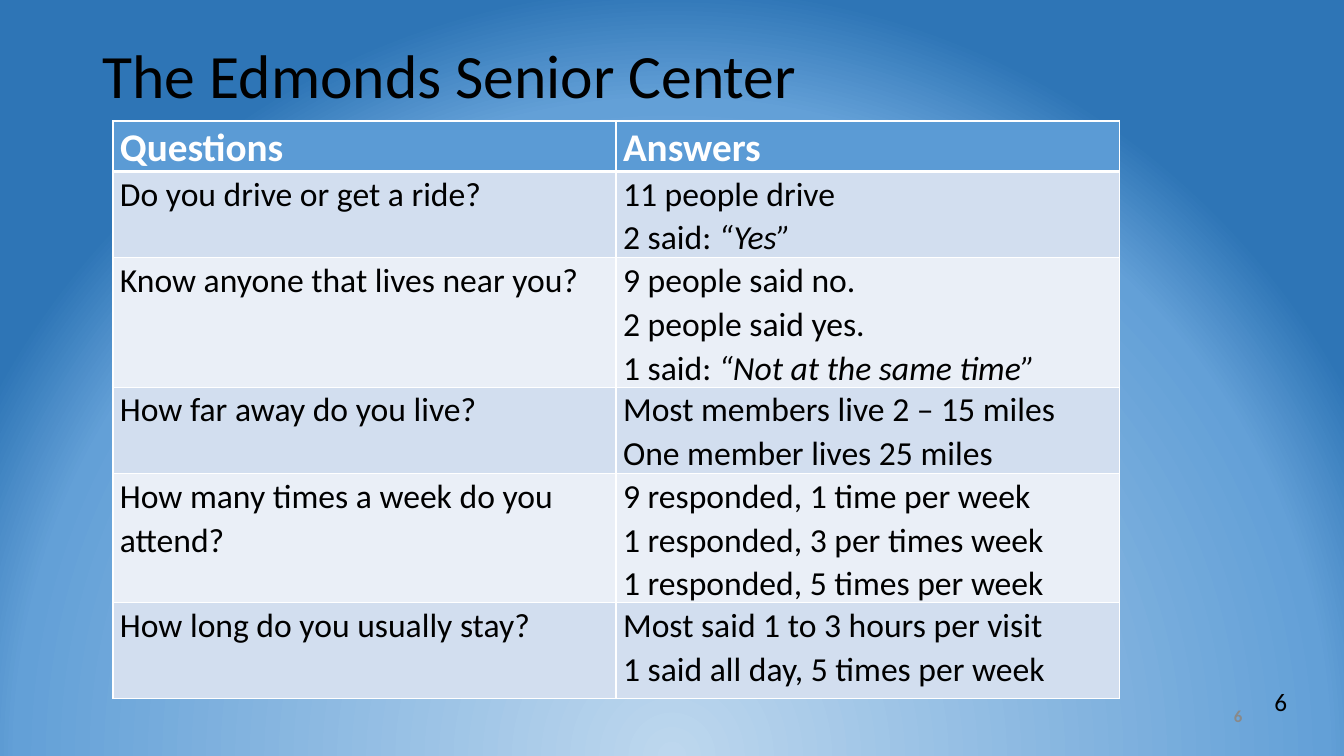
from dataclasses import dataclass

from lxml import etree
from pptx import Presentation
from pptx.dml.color import RGBColor
from pptx.enum.text import PP_ALIGN
from pptx.oxml.ns import qn
from pptx.util import Inches, Pt

LEFT, RIGHT = PP_ALIGN.LEFT, PP_ALIGN.RIGHT


@dataclass(frozen=True)
class Theme:
    font: str = "Calibri"
    ink: str = "000000"
    white: str = "FFFFFF"
    gray: str = "898989"
    head: str = "5B9BD5"
    bands: tuple = ("D2DEEF", "EAEFF7")
    glow: tuple = ((0, "BDD7EE"), (85, "63A0D7"), (100, "2E75B6"))
    title_size: int = 44
    head_size: int = 28
    body_size: int = 24
    page_size: int = 18
    small_size: int = 12


THEME = Theme()
ROWS = (
    ("Do you drive or get a ride?", ("11 people drive", "2 said: “Yes”")),
    ("Know anyone that lives near you?",
     ("9 people said no.", "2 people said yes.", "1 said: “Not at the same time”")),
    ("How far away do you live?",
     ("Most members live 2 – 15 miles", "One member lives 25 miles")),
    ("How many times a week do you attend?",
     ("9 responded, 1 time per week", "1 responded, 3 per times week",
      "1 responded, 5 times per week")),
    ("How long do you usually stay?",
     ("Most said 1 to 3 hours per visit", "1 said all day, 5 times per week")),
)
HEIGHTS = (0.48, 0.84, 1.26, 0.84, 1.26, 0.95)


def add_run(para, text, size, color, bold=False, italic=False):
    run = para.add_run()
    run.text = text
    font = run.font
    font.name, font.size = THEME.font, Pt(size)
    font.bold, font.italic = bold, italic
    font.color.rgb = RGBColor.from_string(color)


def add_text(slide, box, text, size, color, align=LEFT, gap=1.0, bold=False):
    frame = slide.shapes.add_textbox(*map(Inches, box)).text_frame
    frame.word_wrap = True
    para = frame.paragraphs[0]
    para.alignment, para.line_spacing = align, gap
    add_run(para, text, size, color, bold)


def add_stop(parent, spot, color):
    stop = etree.SubElement(parent, qn("a:gs"), pos=str(spot * 1000))
    etree.SubElement(stop, qn("a:srgbClr"), val=color)


def paint_back(slide):
    slide.background.fill.gradient()
    grad = next(slide.element.iter(qn("a:gradFill")))
    for child in list(grad):
        grad.remove(child)
    stops = etree.SubElement(grad, qn("a:gsLst"))
    for spot, color in THEME.glow:
        add_stop(stops, spot, color)
    ring = etree.SubElement(grad, qn("a:path"), path="circle")
    etree.SubElement(ring, qn("a:fillToRect"),
                     l="50000", t="130000", r="50000", b="-30000")


def add_edges(cell, top, bottom):
    props = cell._tc.get_or_add_tcPr()
    for side, width in (("L", 1), ("R", 1), ("T", top), ("B", bottom)):
        line = etree.SubElement(props, qn(f"a:ln{side}"), w=str(Pt(width)))
        fill = etree.SubElement(line, qn("a:solidFill"))
        etree.SubElement(fill, qn("a:srgbClr"), val=THEME.white)


def fill_cell(cell, lines, row):
    head = row == 0
    size = THEME.head_size if head else THEME.body_size
    ink = THEME.white if head else THEME.ink
    back = THEME.head if head else THEME.bands[(row - 1) % 2]
    add_edges(cell, 3 if row == 1 else 1, 3 if head else 1)
    cell.fill.solid()
    cell.fill.fore_color.rgb = RGBColor.from_string(back)
    cell.margin_left = cell.margin_right = Inches(0.07)
    cell.margin_top = cell.margin_bottom = Inches(0)
    frame = cell.text_frame
    for index, text in enumerate(lines):
        para = frame.add_paragraph() if index else frame.paragraphs[0]
        para.line_spacing = 1.07
        plain, mark, quote = text.partition("“")
        add_run(para, plain, size, ink, head)
        if mark:
            add_run(para, mark + quote, size, ink, italic=True)


def add_grid(slide):
    box = map(Inches, (1.12, 1.2, 9.99, sum(HEIGHTS)))
    grid = slide.shapes.add_table(len(HEIGHTS), 2, *box).table
    grid.horz_banding = False
    for col in grid.columns:
        col.width = Inches(4.99)
    data = (("Questions", ("Answers",)),) + ROWS
    for row, (height, (ask, reply)) in enumerate(zip(HEIGHTS, data)):
        grid.rows[row].height = Inches(height)
        fill_cell(grid.cell(row, 0), (ask,), row)
        fill_cell(grid.cell(row, 1), reply, row)


def main():
    deck = Presentation()
    deck.slide_width, deck.slide_height = Inches(13.33), Inches(7.5)
    slide = deck.slides.add_slide(deck.slide_layouts[6])
    paint_back(slide)
    add_text(slide, (9.42, 6.95, 3, 0.4), "6", THEME.small_size, THEME.gray,
             RIGHT, bold=True)
    add_text(slide, (0.92, 0.4, 11.5, 1.45), "The Edmonds Senior Center",
             THEME.title_size, THEME.ink, gap=0.9)
    add_grid(slide)
    add_text(slide, (12.54, 6.76, 0.59, 0.4), "6", THEME.page_size, THEME.ink)
    deck.save("out.pptx")


if __name__ == "__main__":
    main()
